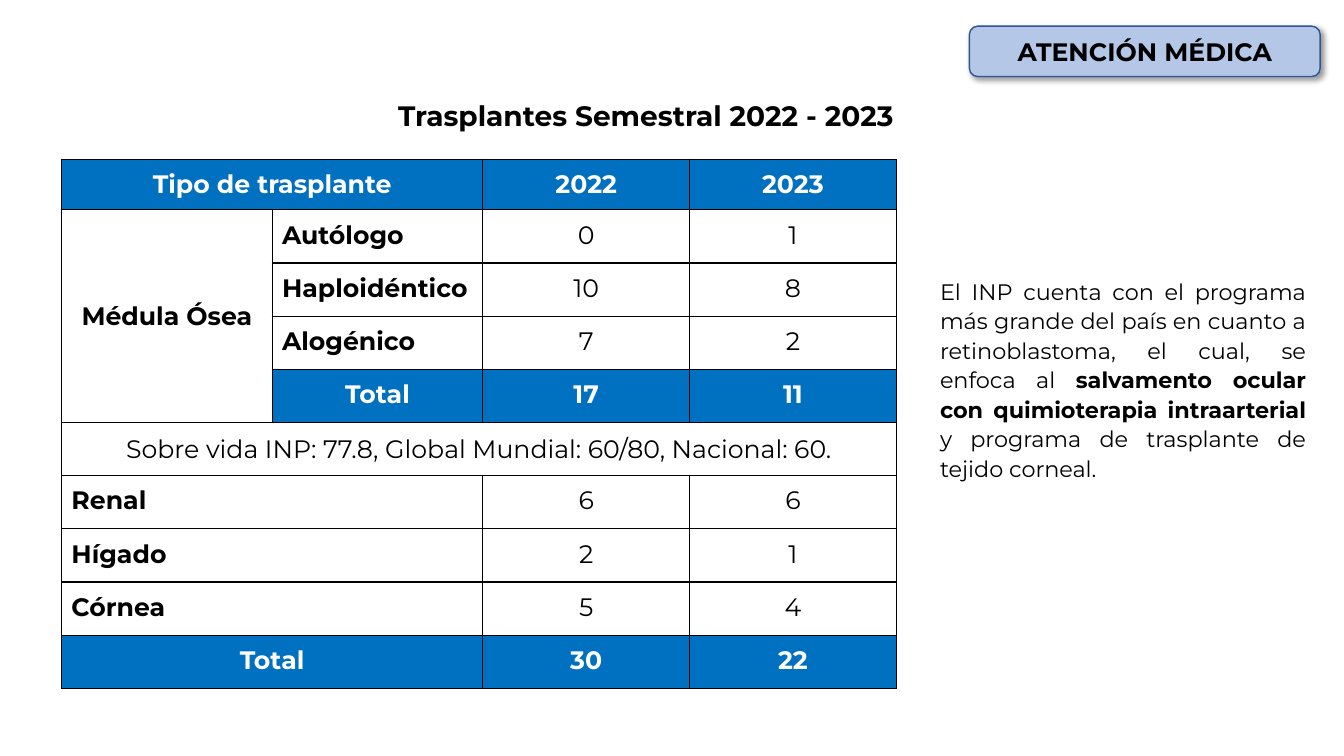
from dataclasses import dataclass
from typing import Any

from lxml.etree import SubElement
from pptx import Presentation
from pptx.dml.color import RGBColor
from pptx.enum.shapes import MSO_SHAPE
from pptx.enum.text import MSO_ANCHOR, MSO_AUTO_SIZE, PP_ALIGN
from pptx.oxml.ns import qn
from pptx.util import Cm, Pt

FONT = "Montserrat"
COLORS = {
    "black": "000000",
    "white": "FFFFFF",
    "blue": "0070C0",
    "pale": "B4C7E7",
    "navy": "2F5597",
}


@dataclass
class Look:
    ink: str
    bold: bool
    align: PP_ALIGN
    fill: str = ""
    anchor: MSO_ANCHOR = MSO_ANCHOR.TOP


@dataclass
class Item:
    row: int
    col: int
    text: str
    look: str
    rows: int = 1
    cols: int = 1


LOOKS = {
    "bar": Look("white", True, PP_ALIGN.CENTER, "blue"),
    "label": Look("black", True, PP_ALIGN.LEFT),
    "value": Look("black", False, PP_ALIGN.CENTER),
    "group": Look("black", True, PP_ALIGN.CENTER, anchor=MSO_ANCHOR.MIDDLE),
    "note": Look("black", False, PP_ALIGN.CENTER, anchor=MSO_ANCHOR.MIDDLE),
}
WIDTHS = (5.31, 5.31, 5.21, 5.21)
HEIGHTS = (1.22,) + (1.34,) * 9
FRAME = {"word_wrap": True, "auto_size": MSO_AUTO_SIZE.NONE}
INSETS = dict.fromkeys(
    ("margin_left", "margin_right", "margin_top", "margin_bottom"), Cm(0.25)
)


def rgb(name: str) -> RGBColor:
    return RGBColor.from_string(COLORS[name])


def apply(target: Any, values: dict[str, Any]) -> None:
    for key, value in values.items():
        setattr(target, key, value)


def place(left: float, top: float, width: float, height: float) -> dict[str, Any]:
    return {"left": Cm(left), "top": Cm(top), "width": Cm(width), "height": Cm(height)}


def write(para: Any, text: str, size: int, bold: bool, ink: str = "black") -> None:
    run = para.add_run()
    run.text = text
    apply(run.font, {"name": FONT, "size": Pt(size), "bold": bold})
    run.font.color.rgb = rgb(ink)


def line(first: int, label: str, left: str, right: str, col: int = 0, bar: bool = False) -> list[Item]:
    return [
        Item(first, col, label, "bar" if bar else "label", cols=2 - col),
        Item(first, 2, left, "bar" if bar else "value"),
        Item(first, 3, right, "bar" if bar else "value"),
    ]


ITEMS = [
    *line(0, "Tipo de trasplante", "2022", "2023", bar=True),
    Item(1, 0, "Médula Ósea", "group", rows=4),
    *line(1, "Autólogo", "0", "1", col=1),
    *line(2, "Haploidéntico", "10", "8", col=1),
    *line(3, "Alogénico", "7", "2", col=1),
    *line(4, "Total", "17", "11", col=1, bar=True),
    Item(5, 0, "Sobre vida INP: 77.8, Global Mundial: 60/80, Nacional: 60.", "note", cols=4),
    *line(6, "Renal", "6", "6"),
    *line(7, "Hígado", "2", "1"),
    *line(8, "Córnea", "5", "4"),
    *line(9, "Total", "30", "22", bar=True),
]


def border(cell: Any) -> None:
    props = cell._tc.get_or_add_tcPr()
    for side in ("lnL", "lnR", "lnT", "lnB"):
        edge = SubElement(props, qn(f"a:{side}"), w=str(Pt(1)))
        fill = SubElement(edge, qn("a:solidFill"))
        SubElement(fill, qn("a:srgbClr"), val=COLORS["black"])


def draw_item(table: Any, item: Item) -> None:
    look = LOOKS[item.look]
    cell = table.cell(item.row, item.col)
    if item.rows * item.cols > 1:
        cell.merge(table.cell(item.row + item.rows - 1, item.col + item.cols - 1))
    apply(cell, INSETS | {"vertical_anchor": look.anchor})
    if look.fill:
        cell.fill.solid()
        cell.fill.fore_color.rgb = rgb(look.fill)
    para = cell.text_frame.paragraphs[0]
    para.alignment = look.align
    write(para, item.text, 18, look.bold, look.ink)


def draw_table(slide: Any) -> None:
    table = slide.shapes.add_table(
        len(HEIGHTS), len(WIDTHS), **place(1.55, 4.01, sum(WIDTHS), sum(HEIGHTS))
    ).table
    apply(table, {"first_row": False, "horz_banding": False})
    for column, width in zip(table.columns, WIDTHS):
        column.width = Cm(width)
    for row, height in zip(table.rows, HEIGHTS):
        row.height = Cm(height)
    for cell in table.iter_cells():
        border(cell)
        cell.fill.background()
    for item in ITEMS:
        draw_item(table, item)


def draw_title(slide: Any) -> None:
    title = slide.shapes.title
    apply(title, place(9.27, 2.36, 14.22, 1.12))
    apply(title.text_frame, FRAME | {"vertical_anchor": MSO_ANCHOR.TOP})
    para = title.text_frame.paragraphs[0]
    para.alignment = PP_ALIGN.CENTER
    write(para, "Trasplantes Semestral 2022 - 2023 ", 20, True)


def draw_text(slide: Any) -> None:
    frame = slide.shapes.add_textbox(**place(23.44, 6.81, 9.73, 5.49)).text_frame
    apply(frame, FRAME)
    para = frame.paragraphs[0]
    apply(para, {"alignment": PP_ALIGN.JUSTIFY, "line_spacing": 1.1})
    write(
        para,
        "El INP cuenta con el programa más grande del país en cuanto a "
        "retinoblastoma, el cual, se enfoca al ",
        16,
        False,
    )
    write(para, "salvamento ocular con quimioterapia intraarterial", 16, True)
    write(para, " y programa de trasplante de tejido corneal.", 16, False)


def draw_badge(slide: Any) -> None:
    badge = slide.shapes.add_shape(
        MSO_SHAPE.ROUNDED_RECTANGLE, **place(24.43, 0.66, 8.84, 1.27)
    )
    badge.fill.solid()
    badge.fill.fore_color.rgb = rgb("pale")
    badge.line.color.rgb = rgb("navy")
    badge.line.width = Pt(1)
    badge.shadow.inherit = False
    effects = badge._element.spPr.find(qn("a:effectLst"))
    shadow = SubElement(
        effects, qn("a:outerShdw"), blurRad=str(Pt(4)), dist=str(Pt(3)),
        dir="2700000", algn="tl", rotWithShape="0",
    )
    color = SubElement(shadow, qn("a:srgbClr"), val=COLORS["black"])
    SubElement(color, qn("a:alpha"), val="40000")
    apply(badge.text_frame, FRAME | {"vertical_anchor": MSO_ANCHOR.MIDDLE})
    para = badge.text_frame.paragraphs[0]
    para.alignment = PP_ALIGN.CENTER
    write(para, "ATENCIÓN MÉDICA", 18, True)


def main() -> None:
    deck = Presentation()
    apply(deck, {"slide_width": Cm(33.87), "slide_height": Cm(19.05)})
    slide = deck.slides.add_slide(deck.slide_layouts[5])
    for draw in (draw_title, draw_table, draw_text, draw_badge):
        draw(slide)
    deck.save("out.pptx")


if __name__ == "__main__":
    main()
